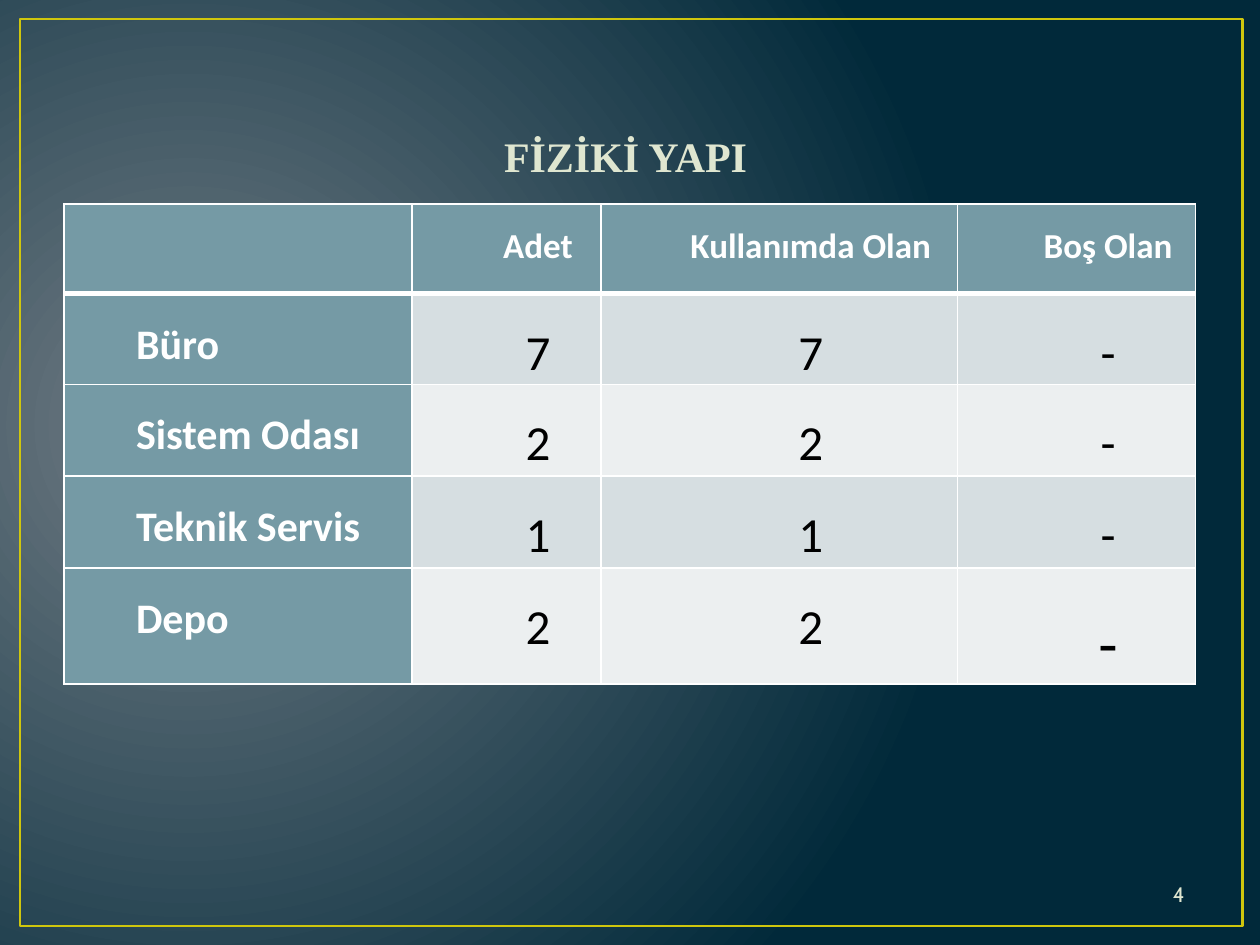
from lxml import etree
from pptx import Presentation
from pptx.dml.color import RGBColor
from pptx.enum.shapes import MSO_SHAPE
from pptx.enum.text import MSO_ANCHOR, PP_ALIGN
from pptx.oxml import parse_xml
from pptx.oxml.ns import nsdecls, qn
from pptx.util import Inches, Pt

GLOW = RGBColor(0x71, 0x7C, 0x84)
NAVY = RGBColor(0x01, 0x29, 0x3A)
GOLD = RGBColor(0xCF, 0xC6, 0x0D)
CREAM = RGBColor(0xDF, 0xE6, 0xD0)
TEAL = RGBColor(0x75, 0x9A, 0xA5)
BAND_DARK = RGBColor(0xD6, 0xDE, 0xE1)
BAND_LIGHT = RGBColor(0xEC, 0xEF, 0xF0)
WHITE = RGBColor(0xFF, 0xFF, 0xFF)
BLACK = RGBColor(0x00, 0x00, 0x00)


def write(tf, text, size, color, bold, font, para):
    """Fill the first paragraph and apply its format values."""
    p = tf.paragraphs[0]
    for name, value in para.items():
        setattr(p, name, value)
    r = p.add_run()
    r.text = text
    r.font.color.rgb = color
    for name, value in {"size": Pt(size), "bold": bold, "name": font}.items():
        setattr(r.font, name, value)
    return p


def add_borders(cell, widths):
    """Draw white cell borders; widths maps each side to points."""
    tcPr = cell._tc.get_or_add_tcPr()
    for i, (side, width) in enumerate(widths.items()):
        tcPr.insert(i, parse_xml(
            f'<a:ln{side} {nsdecls("a")} w="{Pt(width)}"><a:solidFill>'
            f'<a:srgbClr val="{WHITE}"/></a:solidFill></a:ln{side}>'))


prs = Presentation()
prs.slide_width, prs.slide_height = Inches(10), Inches(7.5)
s = prs.slides.add_slide(prs.slide_layouts[6])

# Background: radial glow from the left
fill = s.background.fill
fill.gradient()
for stop, color, position in zip(fill.gradient_stops, (GLOW, NAVY), (0, 1)):
    stop.color.rgb = color
    stop.position = position
grad = s.element.find(".//" + qn("a:gradFill"))
grad.remove(grad.find(qn("a:lin")))
path = etree.SubElement(grad, qn("a:path"), {"path": "circle"})
etree.SubElement(path, qn("a:fillToRect"),
                 {"l": "15000", "t": "50000", "r": "85000", "b": "60000"})

# Frame
sp = s.shapes.add_shape(MSO_SHAPE.RECTANGLE, Inches(0.16), Inches(0.15),
                        Inches(9.7), Inches(7.2))
sp.shadow.inherit = False
sp.fill.background()
sp.line.color.rgb = GOLD
sp.line.width = Pt(1.5)

# Title
tf = s.shapes.add_textbox(Inches(0.43), Inches(0.99),
                          Inches(9.07), Inches(0.55)).text_frame
tf.word_wrap = True
write(tf, "FİZİKİ YAPI", 24, CREAM, True, "Times New Roman",
      {"alignment": PP_ALIGN.CENTER, "space_before": Pt(5)})

# Table of rooms
rows = [
    ("", "Adet", "Kullanımda Olan", "Boş Olan"),
    ("Büro", "7", "7", "-"),
    ("Sistem Odası", "2", "2", "-"),
    ("Teknik Servis", "1", "1", "-"),
    ("Depo", "2", "2", "-"),
]
col_widths = (2.76, 1.5, 2.83, 1.89)
row_heights = (0.71, 0.72, 0.73, 0.73, 0.92)
table = s.shapes.add_table(len(rows), len(col_widths), Inches(0.51), Inches(1.62),
                           Inches(sum(col_widths)), Inches(sum(row_heights))).table
for col, width in zip(table.columns, col_widths):
    col.width = Inches(width)
for row, height in zip(table.rows, row_heights):
    row.height = Inches(height)

margins = {"margin_left": Inches(0.07), "margin_right": Inches(0.07),
           "margin_top": 0, "margin_bottom": 0}
last_row, last_col = len(rows) - 1, len(col_widths) - 1
for i, values in enumerate(rows):
    for j, text in enumerate(values):
        cell = table.cell(i, j)
        for name, value in margins.items():
            setattr(cell, name, value)
        heading = i == 0 or j == 0
        cell.fill.solid()
        cell.fill.fore_color.rgb = TEAL if heading else BAND_DARK if i % 2 else BAND_LIGHT
        add_borders(cell, {"L": 1, "R": 1, "T": 3 if i == 1 else 1,
                           "B": 3 if i == 0 else 1})
        if not text:
            continue
        size = 20 if i == 0 else 24 if j == 0 else 28
        if (i, j) == (last_row, last_col):
            size = 36
        para = {"alignment": PP_ALIGN.LEFT if j == 0 else PP_ALIGN.CENTER,
                "line_spacing": 1.5}
        if j == last_col:
            para["space_after"] = Pt(10)
        p = write(cell.text_frame, text, size, WHITE if heading else BLACK,
                  heading, "Calibri", para)
        pPr = p._p.get_or_add_pPr()
        pPr.set("marL", str(Inches(0.5)))
        pPr.set("indent", "0")

# Page number
tf = s.shapes.add_textbox(Inches(7.17), Inches(6.9),
                          Inches(2.33), Inches(0.4)).text_frame
tf.word_wrap = True
tf.vertical_anchor = MSO_ANCHOR.MIDDLE
write(tf, "4", 12, CREAM, False, "Cabin", {"alignment": PP_ALIGN.RIGHT})

prs.save("out.pptx")
